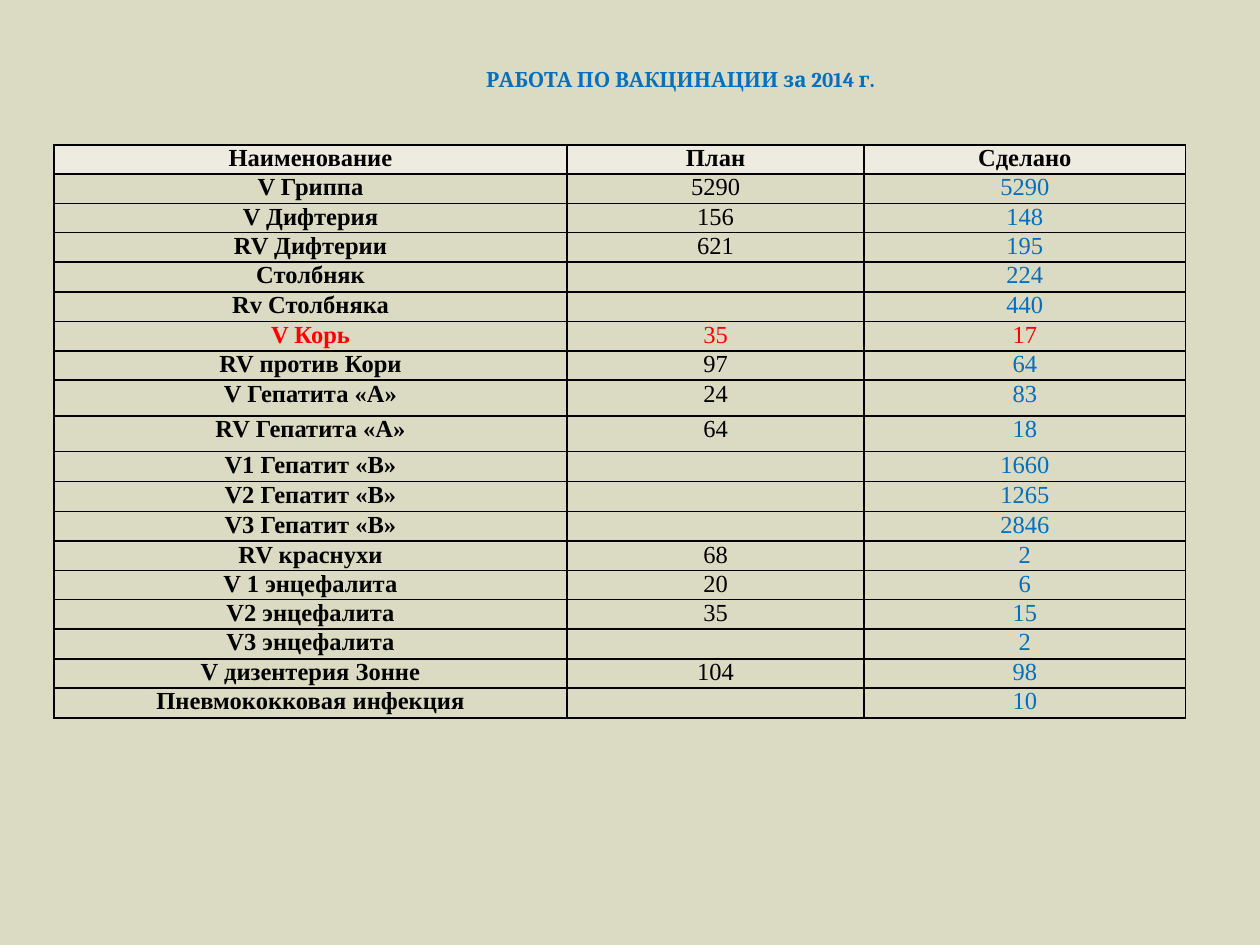
from lxml import etree
from pptx import Presentation
from pptx.dml.color import RGBColor as RGB
from pptx.enum.text import MSO_ANCHOR as Anchor, MSO_AUTO_SIZE as AutoSize, PP_ALIGN as Align
from pptx.oxml.ns import qn
from pptx.util import Cm, Pt

COLORS = {
    "background": "DBDAC2",
    "header": "EEECE1",
    "text": "000000",
    "done": "0070C0",
    "alert": "FF0000",
}
HEADER = ("Наименование", "План", "Сделано")
VACCINATIONS = [
    ("V Гриппа", "5290", "5290"),
    ("V Дифтерия", "156", "148"),
    ("RV Дифтерии", "621", "195"),
    ("Столбняк", "", "224"),
    ("Rv Столбняка", "", "440"),
    ("V Корь", "35", "17"),
    ("RV против Кори", "97", "64"),
    ("V Гепатита «А»", "24", "83"),
    ("RV Гепатита «А»", "64", "18"),
    ("V1 Гепатит «В»", "", "1660"),
    ("V2 Гепатит «В»", "", "1265"),
    ("V3 Гепатит «В»", "", "2846"),
    ("RV краснухи", "68", "2"),
    ("V 1 энцефалита", "20", "6"),
    ("V2 энцефалита", "35", "15"),
    ("V3 энцефалита", "", "2"),
    ("V дизентерия Зонне", "104", "98"),
    ("Пневмококковая инфекция", "", "10"),
]
ALERT_ROW = "V Корь"
TALL_ROWS = ("V Гепатита «А»", "RV Гепатита «А»")
COL_WIDTHS = (10.34, 5.99, 6.48)
ROW_HEIGHT, TALL_HEIGHT = 0.59, 0.72


class SlideBuilder:
    title_font = "Cambria"
    table_font = "Times New Roman"

    def __init__(self, prs):
        self.s = prs.slides.add_slide(prs.slide_layouts[5])
        fill = self.s.background.fill
        fill.solid()
        fill.fore_color.rgb = RGB.from_string(COLORS["background"])

    def style(self, font, name, size, color, bold):
        font.name, font.size, font.bold = name, Pt(size), bold
        font.color.rgb = RGB.from_string(COLORS[color])

    def title(self, text, left, top, width, height):
        sp = self.s.shapes.title
        sp.left, sp.top, sp.width, sp.height = map(Cm, (left, top, width, height))
        tf = sp.text_frame
        tf.word_wrap, tf.auto_size = True, AutoSize.NONE
        tf.vertical_anchor = Anchor.TOP
        tf.margin_left, tf.margin_top = Cm(2.29), Cm(0.43)
        tf.margin_right, tf.margin_bottom = Cm(0.25), Cm(0.1)
        p = tf.paragraphs[0]
        p.alignment = Align.CENTER
        r = p.add_run()
        r.text = text
        self.style(r.font, self.title_font, 12, "done", True)

    def borders(self, cell):
        tc_pr = cell._tc.get_or_add_tcPr()
        for i, side in enumerate(("a:lnL", "a:lnR", "a:lnT", "a:lnB")):
            ln = etree.Element(qn(side), w=str(Pt(1)))
            fill = etree.SubElement(ln, qn("a:solidFill"))
            etree.SubElement(fill, qn("a:srgbClr"), val=COLORS["text"])
            tc_pr.insert(i, ln)

    def cell(self, cell, text, color, bold, fill=None):
        cell.margin_left = cell.margin_right = Cm(0.18)
        cell.margin_top = cell.margin_bottom = 0
        if fill:
            cell.fill.solid()
            cell.fill.fore_color.rgb = RGB.from_string(COLORS[fill])
        else:
            cell.fill.background()
        self.borders(cell)
        p = cell.text_frame.paragraphs[0]
        p.alignment = Align.CENTER
        if text:
            r = p.add_run()
            r.text = text
            self.style(r.font, self.table_font, 14, color, bold)
        else:
            p.font.size = Pt(14)

    def table(self, header, rows, left, top):
        heights = [TALL_HEIGHT if row[0] in TALL_ROWS else ROW_HEIGHT for row in (header, *rows)]
        frame = self.s.shapes.add_table(
            len(heights), len(header), Cm(left), Cm(top), Cm(sum(COL_WIDTHS)), Cm(sum(heights))
        )
        table = frame.table
        table.first_row = table.horz_banding = False
        for column, width in zip(table.columns, COL_WIDTHS):
            column.width = Cm(width)
        for row, height in zip(table.rows, heights):
            row.height = Cm(height)
        for j, text in enumerate(header):
            self.cell(table.cell(0, j), text, "text", True, "header")
        for i, row in enumerate(rows, 1):
            for j, text in enumerate(row):
                color = "alert" if row[0] == ALERT_ROW else "done" if j == 2 else "text"
                self.cell(table.cell(i, j), text, color, j == 0)


def main():
    prs = Presentation()
    prs.slide_width, prs.slide_height = Cm(25.4), Cm(19.05)
    slide = SlideBuilder(prs)
    slide.title("РАБОТА ПО ВАКЦИНАЦИИ за 2014 г.", 1.5, 0.91, 22.4, 1.8)
    slide.table(HEADER, VACCINATIONS, 1.09, 2.92)
    prs.save("out.pptx")


if __name__ == "__main__":
    main()
